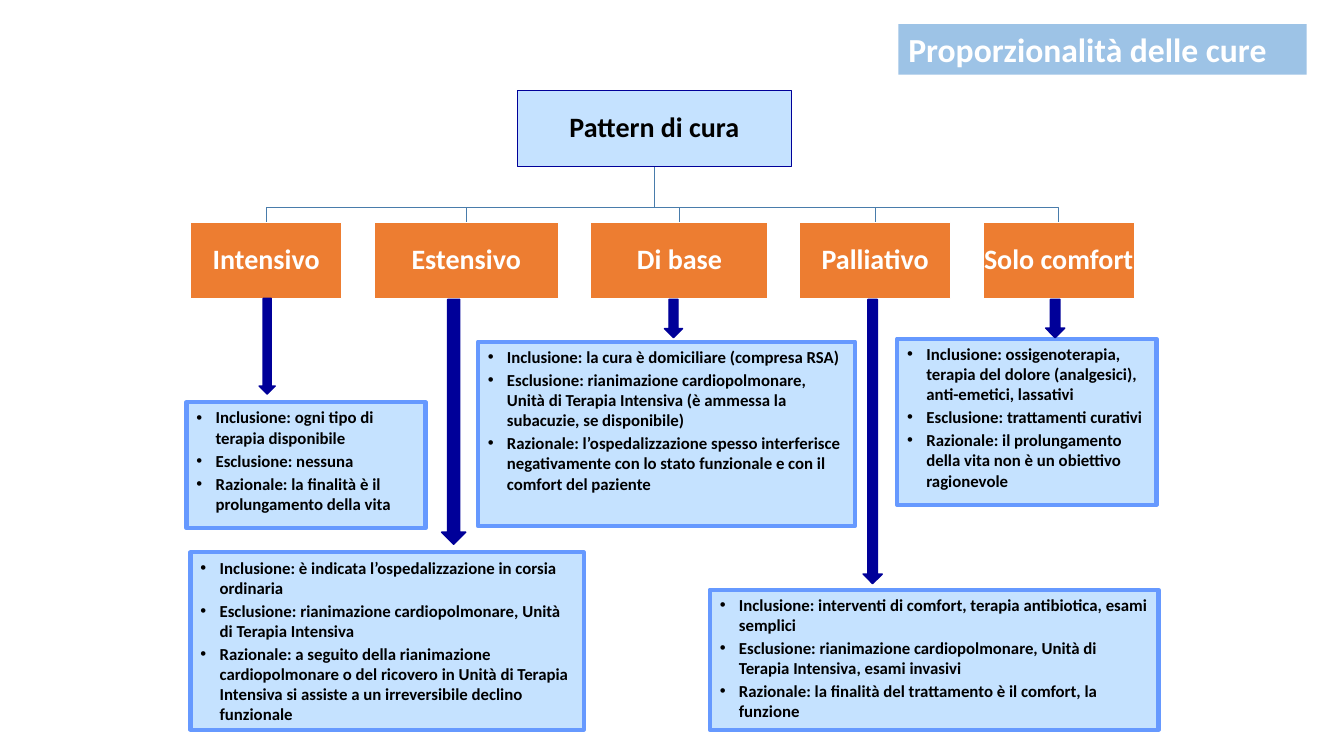
from lxml.etree import SubElement
from pptx import Presentation
from pptx.dml.color import RGBColor
from pptx.enum.shapes import MSO_SHAPE as Preset
from pptx.enum.text import MSO_ANCHOR as Anchor, MSO_AUTO_SIZE as AutoSize, PP_ALIGN as Align
from pptx.oxml.ns import qn
from pptx.util import Inches, Pt

COLOURS = {
    "white": "FFFFFF", "black": "000000", "navy": "000099", "pale": "C5E2FF",
    "border": "6699FF", "orange": "ED7D31", "branch": "497CAB", "banner": "9DC3E6",
}

# Root box and the row of patterns: left, width, name
ROOT = (5.13, 0.9, 2.72, 0.75)
ROW_TOP, ROW_HEIGHT, TRUNK_BOTTOM = 2.21, 0.75, 2.06
PATTERNS = [
    (1.89, 1.5, "Intensivo"),
    (3.71, 1.83, "Estensivo"),
    (5.86, 1.76, "Di base"),
    (7.93, 1.5, "Palliativo"),
    (9.75, 1.5, "Solo comfort"),
]

# Description boxes: position, then inclusion, exclusion and rationale
DETAILS = [
    ((1.85, 3.99, 2.37, 1.25),
     "ogni tipo di terapia disponibile",
     "nessuna",
     "la finalità è il prolungamento della vita"),
    ((1.89, 5.48, 3.9, 1.76),
     "è indicata l’ospedalizzazione in corsia ordinaria",
     "rianimazione cardiopolmonare, Unità di Terapia Intensiva",
     "a seguito della rianimazione cardiopolmonare o del ricovero in Unità di "
     "Terapia Intensiva si assiste a un irreversibile declino funzionale"),
    ((4.74, 3.39, 3.74, 1.83),
     "la cura è domiciliare (compresa RSA)",
     "rianimazione cardiopolmonare, Unità di Terapia Intensiva (è ammessa la "
     "subacuzie, se disponibile)",
     "l’ospedalizzazione spesso interferisce negativamente con lo stato "
     "funzionale e con il comfort del paziente"),
    ((7.04, 5.85, 4.45, 1.39),
     "interventi di comfort, terapia antibiotica, esami semplici",
     "rianimazione cardiopolmonare, Unità di Terapia Intensiva, esami invasivi",
     "la finalità del trattamento è il comfort, la funzione"),
    ((8.9, 3.36, 2.57, 1.65),
     "ossigenoterapia, terapia del dolore (analgesici), anti-emetici, lassativi",
     "trattamenti curativi",
     "il prolungamento della vita non è un obiettivo ragionevole"),
]
LABELS = ("Inclusione", "Esclusione", "Razionale")

ARROWS = [
    (2.57, 2.96, 0.16, 0.95),
    (4.38, 2.97, 0.24, 2.43),
    (6.59, 2.97, 0.18, 0.38),
    (8.56, 2.97, 0.19, 2.82),
    (10.37, 2.97, 0.19, 0.38),
]


def apply(target, values):
    for name, value in values.items():
        setattr(target, name, value)


class CareSlide:
    font = "Calibri"

    def __init__(self, slide):
        self.slide = slide

    def colour(self, name):
        return RGBColor.from_string(COLOURS[name])

    def paint(self, shape, fill, line, width):
        shape.shadow.inherit = False
        if fill:
            shape.fill.solid()
            shape.fill.fore_color.rgb = self.colour(fill)
        else:
            shape.fill.background()
        if line:
            shape.line.color.rgb = self.colour(line)
            shape.line.width = Pt(width)
        else:
            shape.line.fill.background()

    def block(self, box, fill, line=None, width=1, preset=Preset.RECTANGLE):
        shape = self.slide.shapes.add_shape(preset, *map(Inches, box))
        self.paint(shape, fill, line, width)
        return shape

    def label(self, shape, texts, size, colour, frame_format, paragraph_format):
        frame = shape.text_frame
        apply(frame, {"word_wrap": True, **frame_format})
        frame.text = "\n".join(texts)
        for paragraph in frame.paragraphs:
            apply(paragraph, paragraph_format)
            font = paragraph.runs[0].font
            apply(font, {"name": self.font, "size": Pt(size), "bold": True})
            font.color.rgb = self.colour(colour)
        return frame.paragraphs

    def node(self, box, text, fill, line, colour):
        margins = dict.fromkeys(
            ("margin_left", "margin_top", "margin_right", "margin_bottom"), Inches(0.01))
        self.label(self.block(box, fill, line), [text], 20, colour,
                   {"vertical_anchor": Anchor.MIDDLE, **margins},
                   {"alignment": Align.CENTER, "line_spacing": 0.9})

    def branch(self, points):
        corners = [(Inches(x), Inches(y)) for x, y in points]
        builder = self.slide.shapes.build_freeform(*corners[0])
        builder.add_line_segments(corners[1:], close=False)
        self.paint(builder.convert_to_shape(), None, "branch", 1)

    def details(self, box, texts):
        paragraphs = self.label(
            self.block(box, "pale", "border", 3), texts, 12, "black",
            {"vertical_anchor": Anchor.TOP},
            {"alignment": Align.LEFT, "space_before": Pt(2)})
        for paragraph in paragraphs:
            properties = paragraph._p.get_or_add_pPr()
            properties.set("marL", str(Inches(0.19)))
            properties.set("indent", str(-Inches(0.19)))
            SubElement(properties, qn("a:buFont")).set("typeface", "Arial")
            SubElement(properties, qn("a:buChar")).set("char", "•")

    def arrow(self, box):
        self.block(box, "navy", "navy", preset=Preset.DOWN_ARROW)

    def banner(self, box, text):
        self.label(self.block(box, "banner"), [text], 24, "white",
                   {"vertical_anchor": Anchor.TOP, "auto_size": AutoSize.SHAPE_TO_FIT_TEXT},
                   {"alignment": Align.LEFT})


def main():
    presentation = Presentation()
    apply(presentation, {"slide_width": Inches(13.33), "slide_height": Inches(7.5)})
    care = CareSlide(presentation.slides.add_slide(presentation.slide_layouts[6]))

    # Tree of care patterns, branches behind the boxes
    left, top, width, height = ROOT
    trunk = left + width / 2
    for left, width, _ in reversed(PATTERNS):
        centre = left + width / 2
        care.branch([(trunk, top + height), (trunk, TRUNK_BOTTOM),
                     (centre, TRUNK_BOTTOM), (centre, ROW_TOP)])
    care.node(ROOT, "Pattern di cura", "pale", "navy", "black")
    for left, width, name in PATTERNS:
        care.node((left, ROW_TOP, width, ROW_HEIGHT), name, "orange", "white", "white")

    # Descriptions and the arrows that lead to them
    for box, *texts in DETAILS:
        care.details(box, [f"{label}: {text}" for label, text in zip(LABELS, texts)])
    for box in ARROWS:
        care.arrow(box)

    # Title
    care.banner((8.91, 0.24, 4.05, 0.5), "Proporzionalità delle cure")

    presentation.save("out.pptx")


if __name__ == "__main__":
    main()
